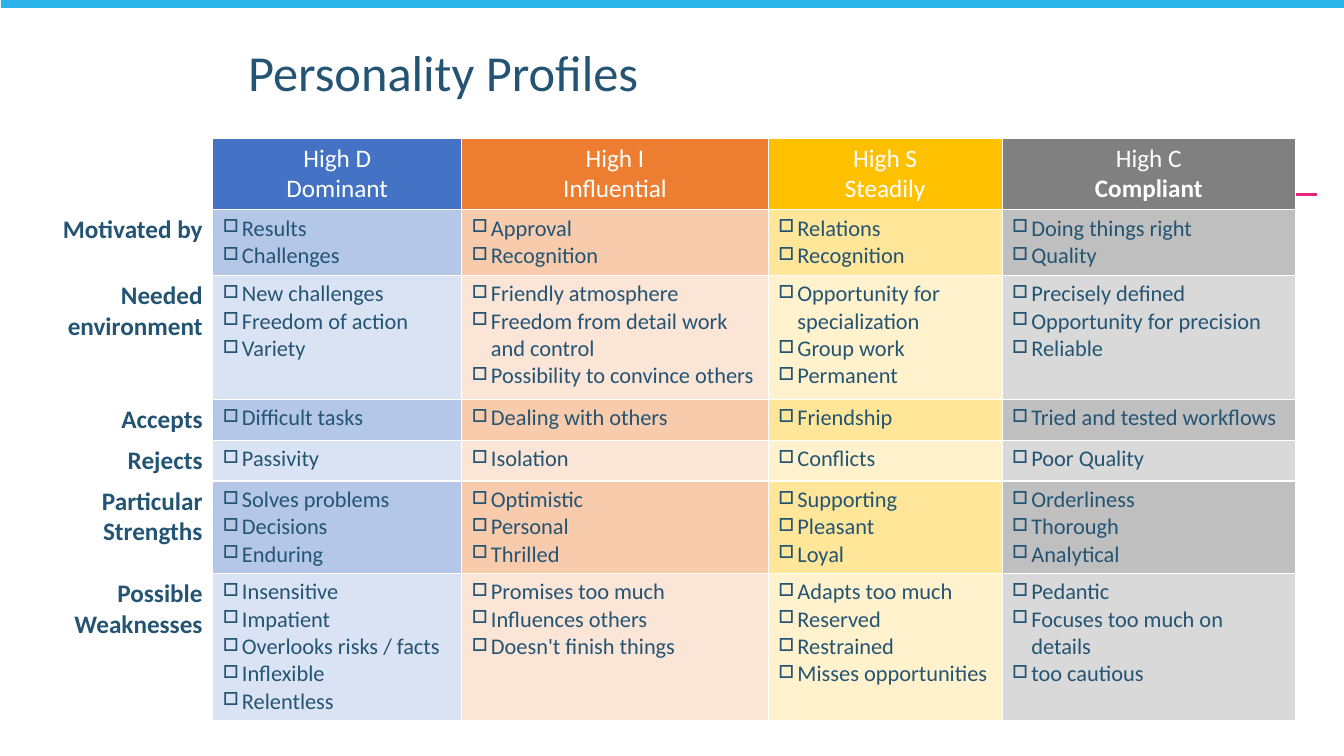
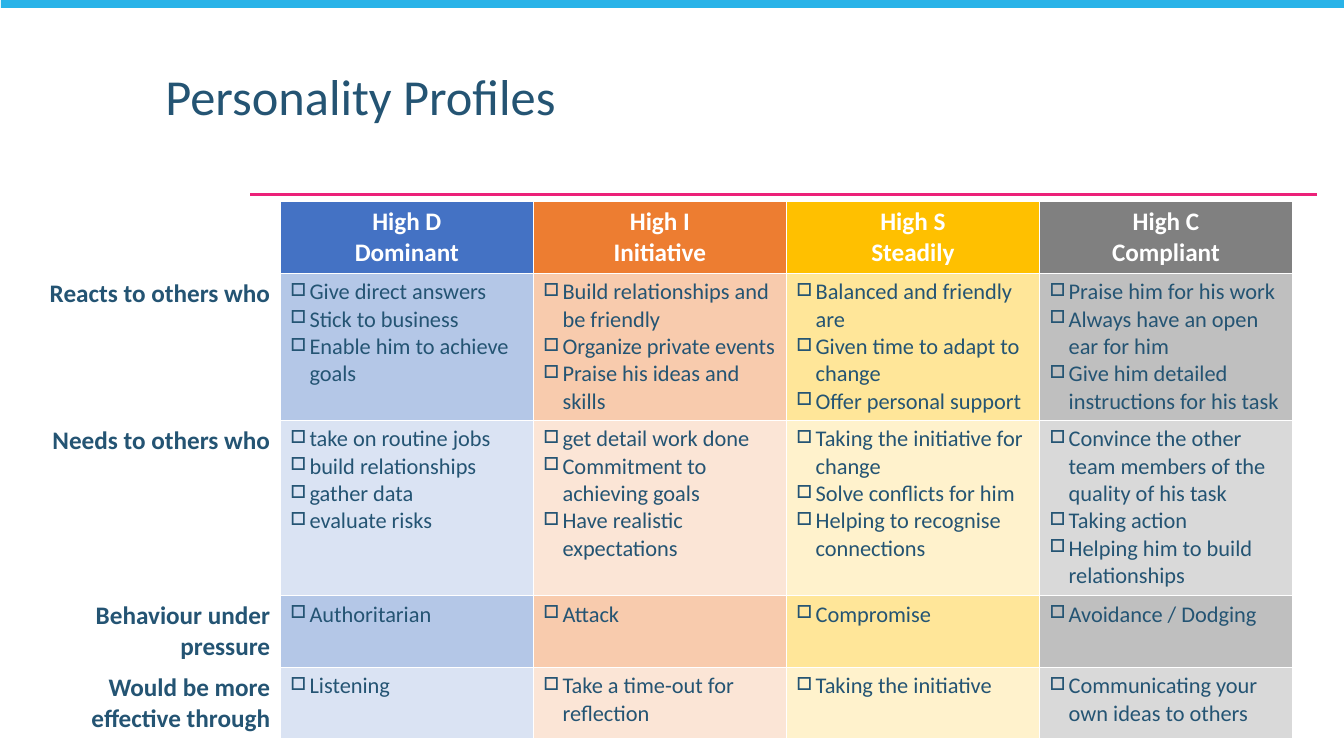
from lxml.etree import SubElement
from pptx import Presentation
from pptx.dml.color import RGBColor
from pptx.enum.shapes import MSO_CONNECTOR, MSO_SHAPE
from pptx.enum.text import MSO_ANCHOR, MSO_AUTO_SIZE, PP_ALIGN
from pptx.oxml.ns import qn
from pptx.util import Inches, Pt

FONT = "Calibri"
NAVY = RGBColor(0x24, 0x54, 0x73)
WHITE = RGBColor(0xFF, 0xFF, 0xFF)
SKY = RGBColor(0x29, 0xB3, 0xE8)
PINK = RGBColor(0xEC, 0x21, 0x79)
# Each column: header, odd rows, even rows
PROFILE_FILLS = [
    (RGBColor(0x44, 0x72, 0xC4), RGBColor(0xB4, 0xC7, 0xE7), RGBColor(0xDA, 0xE3, 0xF3)),
    (RGBColor(0xED, 0x7D, 0x31), RGBColor(0xF8, 0xCB, 0xAD), RGBColor(0xFB, 0xE5, 0xD6)),
    (RGBColor(0xFF, 0xC0, 0x00), RGBColor(0xFF, 0xE6, 0x99), RGBColor(0xFF, 0xF2, 0xCC)),
    (RGBColor(0x80, 0x80, 0x80), RGBColor(0xBF, 0xBF, 0xBF), RGBColor(0xD9, 0xD9, 0xD9)),
]
BULLET_INDENT = Inches(0.19)

PAGES = [
    {
        "title_at": (2.36, 0.43),
        "table_at": (0.11, 1.37),
        "columns": [2, 2.47, 3.04, 2.32, 2.91],
        "heights": [0.7, 0.65, 1.23, 0.4, 0.4, 0.91, 1.46],
        "headers": ["High D\vDominant", "High I\vInfluential",
                    "High S\vSteadily", "High C\vCompliant"],
        "bold_words": ["Compliant"],
        "rows": [
            ("Motivated by",
             "Results\nChallenges",
             "Approval\nRecognition",
             "Relations\nRecognition",
             "Doing things right\nQuality"),
            ("Needed environment",
             "New challenges\nFreedom of action\nVariety",
             "Friendly atmosphere\nFreedom from detail work and control\n"
             "Possibility to convince others",
             "Opportunity for specialization\nGroup work\nPermanent",
             "Precisely defined\nOpportunity for precision\nReliable"),
            ("Accepts", "Difficult tasks", "Dealing with others",
             "Friendship", "Tried and tested workflows"),
            ("Rejects", "Passivity", "Isolation", "Conflicts", "Poor Quality"),
            ("Particular Strengths",
             "Solves problems\nDecisions\nEnduring",
             "Optimistic\nPersonal\nThrilled",
             "Supporting\nPleasant\nLoyal",
             "Orderliness\nThorough\nAnalytical"),
            ("Possible Weaknesses",
             "Insensitive\nImpatient\nOverlooks risks / facts\nInflexible\nRelentless",
             "Promises too much\nInfluences others\nDoesn't finish things",
             "Adapts too much\nReserved\nRestrained\nMisses opportunities",
             "Pedantic\nFocuses too much on details\ntoo cautious"),
        ],
    },
    {
        "title_at": (1.54, 0.66),
        "table_at": (0.27, 2),
        "columns": [2.51] * 5,
        "heights": [0.7, 1.46, 1.74, 0.7, 0.7],
        "headers": ["High D\vDominant", "High I\vInitiative",
                    "High S\vSteadily", "High C\vCompliant"],
        "bold_words": ["High D", "Dominant", "High I", "Initiative",
                       "High S", "Steadily", "High C", "Compliant"],
        "rows": [
            ("Reacts to others who",
             "Give direct answers\nStick to business\nEnable him to achieve goals",
             "Build relationships and be friendly\nOrganize private events\n"
             "Praise his ideas and skills",
             "Balanced and friendly are\nGiven time to adapt to change\n"
             "Offer personal support",
             "Praise him for his work\nAlways have an open ear for him\n"
             "Give him detailed instructions for his task"),
            ("Needs to others who",
             "take on routine jobs\nbuild relationships\ngather data\nevaluate risks",
             "get detail work done\nCommitment to achieving goals\n"
             "Have realistic expectations",
             "Taking the initiative for change\nSolve conflicts for him\n"
             "Helping to recognise connections",
             "Convince the other team members of the quality of his task\n"
             "Taking action\nHelping him to build relationships"),
            ("Behaviour under pressure",
             "Authoritarian", "Attack", "Compromise", "Avoidance / Dodging"),
            ("Would be more effective through",
             "Listening", "Take a time-out for reflection",
             "Taking the initiative", "Communicating your own ideas to others"),
        ],
    },
]


def format_para(para, size, color, bold=False, align=PP_ALIGN.LEFT):
    para.alignment = align
    for span in para.runs:
        span.font.name = FONT
        span.font.size = Pt(size)
        span.font.color.rgb = color
        span.font.bold = bold


def add_bullet(para):
    props = para._p.get_or_add_pPr()
    props.set("marL", str(BULLET_INDENT))
    props.set("indent", str(-BULLET_INDENT))
    SubElement(props, qn("a:buSzPct")).set("val", "80000")
    SubElement(props, qn("a:buChar")).set("char", "□")


deck = Presentation()
deck.slide_width = Inches(13.33)
deck.slide_height = Inches(7.5)
layout = deck.slide_layouts.get_by_name("Title Only")
for holder in list(layout.placeholders)[1:]:
    layout.shapes.element.remove(holder.element)
pages = [deck.slides.add_slide(layout) for _ in PAGES]

# Rule and top band are drawn once, then moved to the shared layout
drawing = pages[0].shapes
rule = drawing.add_connector(MSO_CONNECTOR.STRAIGHT, Inches(13.06), Inches(1.93),
                             Inches(2.48), Inches(1.93))
rule.line.color.rgb = PINK
rule.line.width = Pt(1.5)
SubElement(rule.element.spPr, qn("a:effectLst"))

band = drawing.add_shape(MSO_SHAPE.RECTANGLE, Inches(0.01), Inches(-0.02),
                         deck.slide_width, Inches(0.1))
band.shadow.inherit = False
band.fill.solid()
band.fill.fore_color.rgb = SKY
band.line.fill.background()

for shared in (rule, band):
    layout.shapes.element.append(shared.element)

for page, content in zip(pages, PAGES):
    title = page.shapes.title
    title.left, title.top = map(Inches, content["title_at"])
    title.width, title.height = Inches(9.68), Inches(0.76)
    frame = title.text_frame
    frame.text = "Personality Profiles"
    frame.auto_size = MSO_AUTO_SIZE.NONE
    frame.vertical_anchor = MSO_ANCHOR.TOP
    frame.paragraphs[0].line_spacing = 0.9
    format_para(frame.paragraphs[0], 36, NAVY)

    left, top = map(Inches, content["table_at"])
    columns, heights = content["columns"], content["heights"]
    table = page.shapes.add_table(len(heights), len(columns), left, top,
                                  Inches(sum(columns)), Inches(sum(heights))).table
    for column, width in zip(table.columns, columns):
        column.width = Inches(width)
    for row, height in zip(table.rows, heights):
        row.height = Inches(height)

    table.cell(0, 0).fill.background()
    for col, header in enumerate(content["headers"], 1):
        cell = table.cell(0, col)
        cell.fill.solid()
        cell.fill.fore_color.rgb = PROFILE_FILLS[col - 1][0]
        cell.text_frame.text = header
        para = cell.text_frame.paragraphs[0]
        format_para(para, 18, WHITE, align=PP_ALIGN.CENTER)
        for span in para.runs:
            span.font.bold = span.text in content["bold_words"]

    for row, texts in enumerate(content["rows"], 1):
        for col, text in enumerate(texts):
            cell = table.cell(row, col)
            cell.text_frame.text = text
            cell.fill.solid()
            if col == 0:
                cell.fill.fore_color.rgb = WHITE
                format_para(cell.text_frame.paragraphs[0], 18, NAVY, True, PP_ALIGN.RIGHT)
                continue
            cell.fill.fore_color.rgb = PROFILE_FILLS[col - 1][1 if row % 2 else 2]
            for para in cell.text_frame.paragraphs:
                add_bullet(para)
                format_para(para, 16, NAVY)

deck.save("out.pptx")
